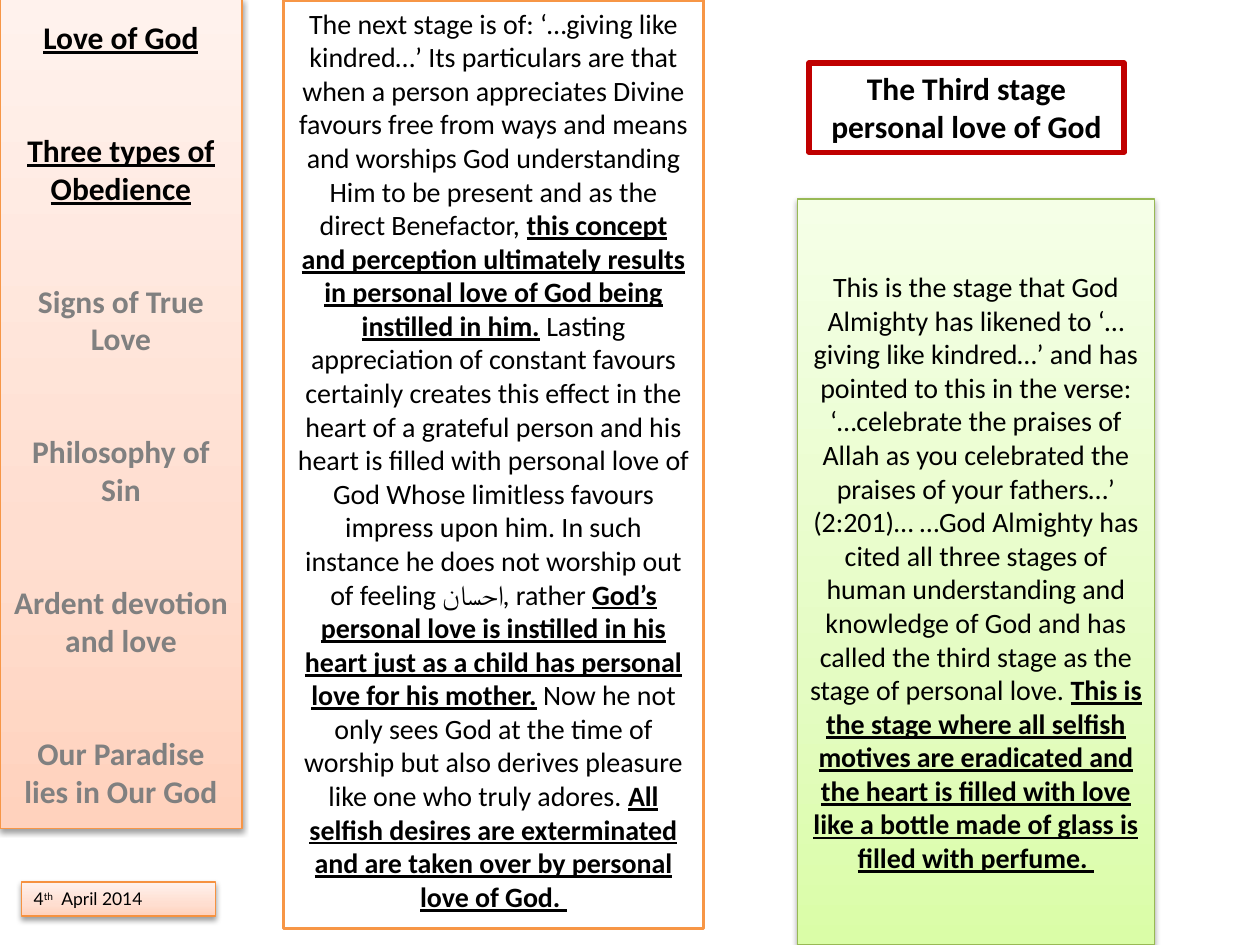
import pptx
import pptx.dml.color
import pptx.enum.shapes
import pptx.enum.text
import pptx.util
from lxml import etree
from pptx.oxml.ns import qn
from pptx.util import Cm

PEACH = ("FFD2BD", "FFDED0", "FFF2ED")
LIME = ("DAFDA7", "E4FCC2", "F5FFE7")
STOP_POSITIONS = (0, 35, 100)
ALIGN = pptx.enum.text.PP_ALIGN
ANCHOR = pptx.enum.text.MSO_ANCHOR
AUTO_SIZE = pptx.enum.text.MSO_AUTO_SIZE

TOPICS = [
    ("Love of God", True),
    ("Three types of Obedience", True),
    ("Signs of True Love", False),
    ("Philosophy of Sin", False),
    ("Ardent devotion and love", False),
    ("Our Paradise lies in Our God", False),
]

# Plain and emphasised passages take turns, starting with a plain one.
KINDRED_STAGE = [
    "The next stage is of: ‘…giving like kindred…’ Its particulars are that when a person "
    "appreciates Divine favours free from ways and means and worships God understanding Him "
    "to be present and as the direct Benefactor, ",
    "this concept and perception ultimately results in personal love of God being instilled "
    "in him.",
    " Lasting appreciation of constant favours certainly creates this effect in the heart of "
    "a grateful person and his heart is filled with personal love of God Whose limitless "
    "favours impress upon him. In such instance he does not worship out of feeling احسان, "
    "rather ",
    "God’s personal love is instilled in his heart just as a child has personal love for his "
    "mother.",
    " Now he not only sees God at the time of worship but also derives pleasure like one who "
    "truly adores. ",
    "All selfish desires are exterminated and are taken over by personal love of God. ",
]
THIRD_STAGE = [
    "This is the stage that God Almighty has likened to ‘…giving like kindred…’ and has "
    "pointed to this in the verse: ‘…celebrate the praises of Allah as you celebrated the "
    "praises of your fathers…’ (2:201)… …God Almighty has cited all three stages of human "
    "understanding and knowledge of God and has called the third stage as the stage of "
    "personal love. ",
    "This is the stage where all selfish motives are eradicated and the heart is filled with "
    "love like a bottle made of glass is filled with perfume. ",
]


def color(value):
    return pptx.dml.color.RGBColor.from_string(value)


def fill_gradient(box, shades):
    """Fade from the first shade at the bottom to the last at the top."""
    box.fill.gradient()
    box.fill.gradient_angle = 90
    stops = box._element.spPr.find(".//" + qn("a:gsLst"))
    for stop in list(stops):
        stops.remove(stop)
    for position, shade in zip(STOP_POSITIONS, shades):
        stop = etree.SubElement(stops, qn("a:gs"), pos=str(position * 1000))
        etree.SubElement(stop, qn("a:srgbClr"), val=shade)


def add_shadow(box):
    effects = box._element.spPr.find(qn("a:effectLst"))
    shadow = etree.SubElement(effects, qn("a:outerShdw"), blurRad="40000", dist="20000",
                              dir="5400000", rotWithShape="0")
    black = etree.SubElement(shadow, qn("a:srgbClr"), val="000000")
    etree.SubElement(black, qn("a:alpha"), val="38000")


def add_box(page, left, top, width, height, line, line_width=0.75, shades=None,
            anchor=ANCHOR.TOP, wrap=True, grow=False):
    """Add a rectangle: white, or shaded with a soft shadow when shades are given."""
    box = page.shapes.add_shape(pptx.enum.shapes.MSO_SHAPE.RECTANGLE,
                                Cm(left), Cm(top), Cm(width), Cm(height))
    box.line.color.rgb = color(line)
    box.line.width = pptx.util.Pt(line_width)
    box.shadow.inherit = False
    if shades:
        fill_gradient(box, shades)
        add_shadow(box)
    else:
        box.fill.solid()
        box.fill.fore_color.rgb = color("FFFFFF")
    frame = box.text_frame
    frame.word_wrap = wrap
    frame.vertical_anchor = anchor
    frame.auto_size = AUTO_SIZE.SHAPE_TO_FIT_TEXT if grow else AUTO_SIZE.NONE
    frame.paragraphs[0].alignment = ALIGN.CENTER
    return box


def add_text(para, text, size=16, font="Calibri", shade="000000", bold=False,
             underline=False, raised=False):
    span = para.add_run()
    span.text = text
    span.font.size = pptx.util.Pt(size)
    span.font.name = font
    span.font.color.rgb = color(shade)
    span.font.bold = bold
    span.font.underline = underline
    if raised:
        span._r.get_or_add_rPr().set("baseline", "30000")


def add_passages(box, passages):
    para = box.text_frame.paragraphs[0]
    for index, passage in enumerate(passages):
        stressed = index % 2 == 1
        add_text(para, passage, bold=stressed, underline=stressed)


def add_topics(page):
    box = add_box(page, 0, -0.03, 4.88, 16.74, "F79646", shades=PEACH, anchor=ANCHOR.MIDDLE)
    frame = box.text_frame
    for index, (topic, current) in enumerate(TOPICS):
        para = frame.add_paragraph() if index else frame.paragraphs[0]
        para.alignment = ALIGN.CENTER
        if index:
            para.space_before = pptx.util.Pt(43)
        add_text(para, topic, size=18, bold=True, underline=current,
                 shade="000000" if current else "808080")


def add_date(page):
    box = add_box(page, 0.43, 17.78, 3.91, 0.69, "F69240", shades=PEACH, wrap=False, grow=True)
    para = box.text_frame.paragraphs[0]
    para.alignment = ALIGN.LEFT
    for text, raised in (("4", False), ("th", True), ("  April 2014", False)):
        add_text(para, text, size=10, font="Lato", raised=raised)


def main():
    deck = pptx.Presentation()
    deck.slide_width, deck.slide_height = Cm(25.4), Cm(19.05)
    page = deck.slides.add_slide(deck.slide_layouts[6])

    add_topics(page)
    heading = add_box(page, 16.31, 1.27, 6.35, 1.8, "C00000", line_width=3, grow=True)
    add_text(heading.text_frame.paragraphs[0], "The Third stage personal love of God",
             size=18, bold=True)
    add_date(page)
    add_passages(add_box(page, 5.72, 0, 8.46, 18.72, "F79646", line_width=2, grow=True),
                 KINDRED_STAGE)
    add_passages(add_box(page, 16.08, 4.01, 7.19, 15.04, "98B955", shades=LIME,
                         anchor=ANCHOR.MIDDLE), THIRD_STAGE)
    deck.save("out.pptx")


if __name__ == "__main__":
    main()
